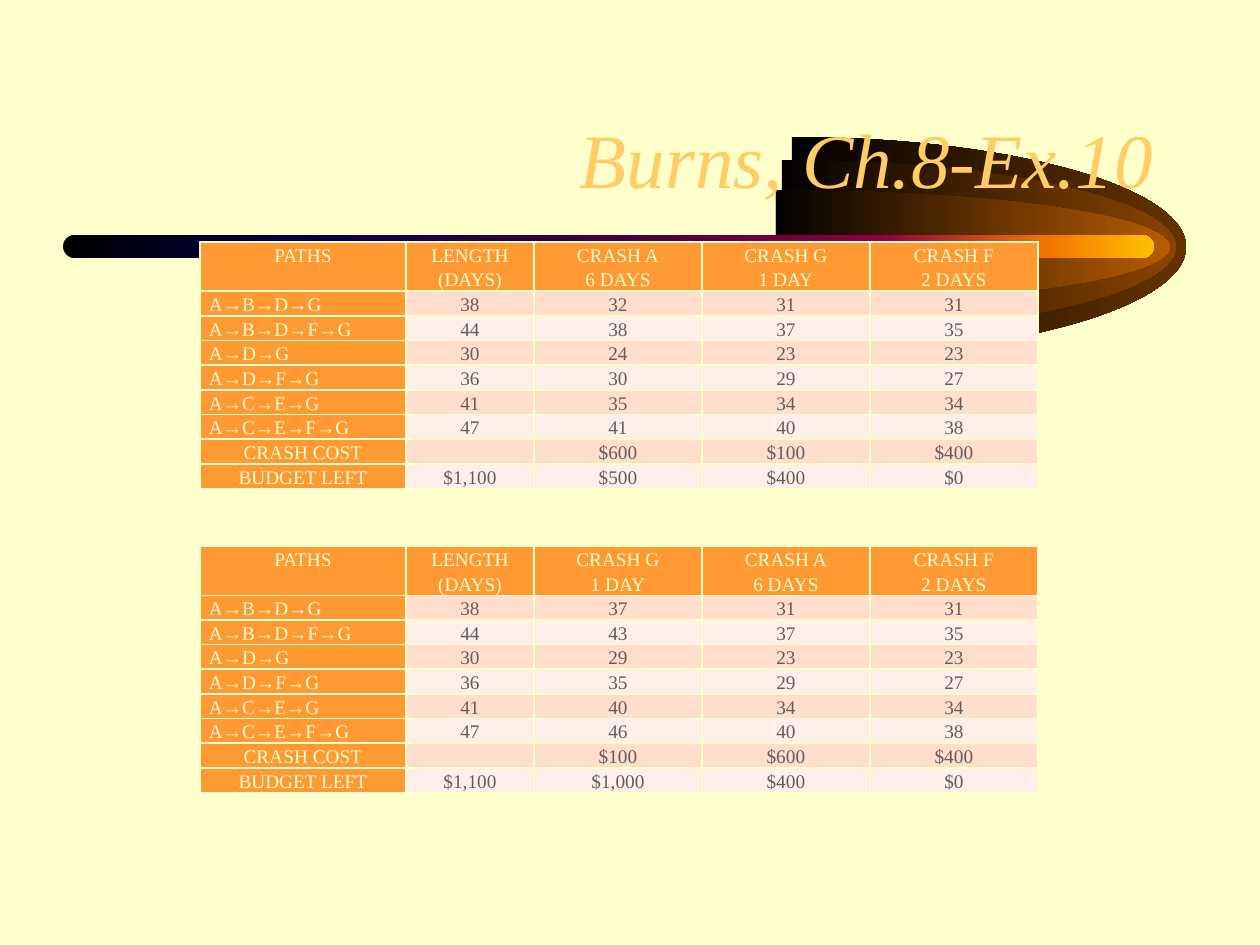
"""Build the crash cost slide: two path tables under a comet banner."""
from lxml.etree import SubElement as Sub
from pptx import Presentation
from pptx.dml.color import RGBColor
from pptx.enum.shapes import MSO_SHAPE as Shape
from pptx.enum.text import MSO_ANCHOR as Anchor, MSO_AUTO_SIZE as Auto, PP_ALIGN as Align
from pptx.oxml.ns import qn
from pptx.util import Pt

PX = 914400 / 126
FONT = "Times New Roman"
CREAM = RGBColor(0xFF, 0xFF, 0xCC)
GOLD = RGBColor(0xFF, 0xCC, 0x66)
ORANGE = RGBColor(0xFF, 0x99, 0x33)
PEACH = RGBColor(0xFF, 0xDE, 0xCE)
PINK = RGBColor(0xFF, 0xEF, 0xE8)
GRAY = RGBColor(0x5F, 0x5F, 0x5F)
BLACK = RGBColor(0, 0, 0)
NAVY = RGBColor(0, 0, 0x40)
PLUM = RGBColor(0x40, 0, 0x40)
WINE = RGBColor(0x8F, 0, 0x40)
FLAME = RGBColor(0xF2, 0x73, 0)
AMBER = RGBColor(0xFF, 0xBF, 0)
DARK = RGBColor(0x66, 0x33, 0)
BROWN = RGBColor(0x89, 0x44, 0)
TAN = RGBColor(0xB7, 0x5B, 0)


def px(*nums):
    return [round(n * PX) for n in nums]


def shade(shape, stops):
    shape.shadow.inherit = False
    shape.line.fill.background()
    shape.fill.gradient()
    shape.fill.gradient_angle = 0
    group = shape.element.spPr.find(qn("a:gradFill")).find(qn("a:gsLst"))
    for old in list(group):
        group.remove(old)
    for pos, color in stops:
        stop = Sub(group, qn("a:gs"), pos=str(pos * 1000))
        Sub(stop, qn("a:srgbClr"), val=str(color))


deck = Presentation()
deck.slide_width, deck.slide_height = px(1260, 945)
slide = deck.slides.add_slide(deck.slide_layouts[5])
slide.background.fill.solid()
slide.background.fill.fore_color.rgb = CREAM
shapes = slide.shapes

mid, wide, lip, bend = 247, 394, 6, 0.55
for left, high, color in [(792, 110, DARK), (782, 87, BROWN), (776, 57, TAN)]:
    form = shapes.build_freeform(*px(left, mid - high), scale=1.0)
    form.add_line_segments([
        px(left + wide, mid), px(left, mid + high),
        px(left - lip, mid + high), px(left, mid)], close=True)
    tail = form.convert_to_shape()
    near, far = lip + bend * wide, lip + wide
    curves = [
        [(near, 0), (far, high * (1 - bend)), (far, high)],
        [(far, high * (1 + bend)), (near, 2 * high), (lip, 2 * high)],
    ]
    for edge, points in zip(list(tail.element.iter(qn("a:lnTo"))), curves):
        curve = edge.makeelement(qn("a:cubicBezTo"))
        for point in points:
            x, y = px(*point)
            Sub(curve, qn("a:pt"), x=str(x), y=str(y))
        edge.getparent().replace(edge, curve)
    shade(tail, [(0, BLACK), (100, color)])

bar = shapes.add_shape(Shape.ROUNDED_RECTANGLE, *px(63, 235, 1091, 23))
bar.adjustments[0] = 0.5
shade(bar, [(0, BLACK), (20, NAVY), (50, PLUM), (75, WINE), (90, FLAME), (100, AMBER)])

title = shapes.title
title.left, title.top, title.width, title.height = px(95, 53, 1071, 157)
title.element.getparent().append(title.element)
frame = title.text_frame
frame.auto_size = Auto.NONE
frame.vertical_anchor = Anchor.BOTTOM
para = frame.paragraphs[0]
para.alignment = Align.RIGHT
run = para.add_run()
run.text = "Burns, Ch.8-Ex.10"
run.font.name, run.font.size, run.font.italic = FONT, Pt(44), True
run.font.color.rgb = GOLD

paths = ["PATHS", "A→B→D→G", "A→B→D→F→G", "A→D→G", "A→D→F→G",
         "A→C→E→G", "A→C→E→F→G", "CRASH COST", "BUDGET LEFT"]
days = ["LENGTH (DAYS)", "38", "44", "30", "36", "41", "47", "", "$1,100"]
last = ["CRASH F\n2 DAYS", "31", "35", "23", "27", "34", "38", "$400", "$0"]
plans = [
    (242, ["CRASH A\n6 DAYS", "32", "38", "24", "30", "35", "41", "$600", "$500"],
     ["CRASH G\n1 DAY", "31", "37", "23", "29", "34", "40", "$100", "$400"]),
    (546, ["CRASH G\n1 DAY", "37", "43", "29", "35", "40", "46", "$100", "$1,000"],
     ["CRASH A\n6 DAYS", "31", "37", "23", "29", "34", "40", "$600", "$400"]),
]
widths = px(206, 128, 168, 168, 168)

for top, first, second in plans:
    rows = list(zip(paths, days, first, second, last))
    grid = shapes.add_table(len(rows), len(widths), *px(200, top, 838, 251))
    table = grid.table
    for col, width in zip(table.columns, widths):
        col.width = width
    for r, row in enumerate(rows):
        table.rows[r].height = px(24 if r else 49)[0]
        for c, text in enumerate(row):
            cell = table.cell(r, c)
            head = r == 0 or c == 0
            cell.margin_left = cell.margin_right = px(9)[0]
            cell.margin_top = cell.margin_bottom = 0
            props = cell._tc.get_or_add_tcPr()
            for side in ("lnL", "lnR", "lnT", "lnB"):
                line = Sub(props, qn("a:" + side), w=str(Pt(1)))
                Sub(Sub(line, qn("a:solidFill")), qn("a:srgbClr"), val=str(CREAM))
            cell.fill.solid()
            cell.fill.fore_color.rgb = ORANGE if head else PEACH if r % 2 else PINK
            body = cell.text_frame
            for n, part in enumerate(text.split("\n")):
                para = body.add_paragraph() if n else body.paragraphs[0]
                para.alignment = Align.LEFT if c == 0 and "→" in text else Align.CENTER
                para.line_spacing = 1.15
                if not part:
                    Sub(para._p, qn("a:endParaRPr"), sz="1100")
                    continue
                run = para.add_run()
                run.text = part
                run.font.name, run.font.size, run.font.bold = FONT, Pt(11), False
                run.font.color.rgb = CREAM if head else GRAY
    grid.height = px(251)[0]

deck.save("out.pptx")
